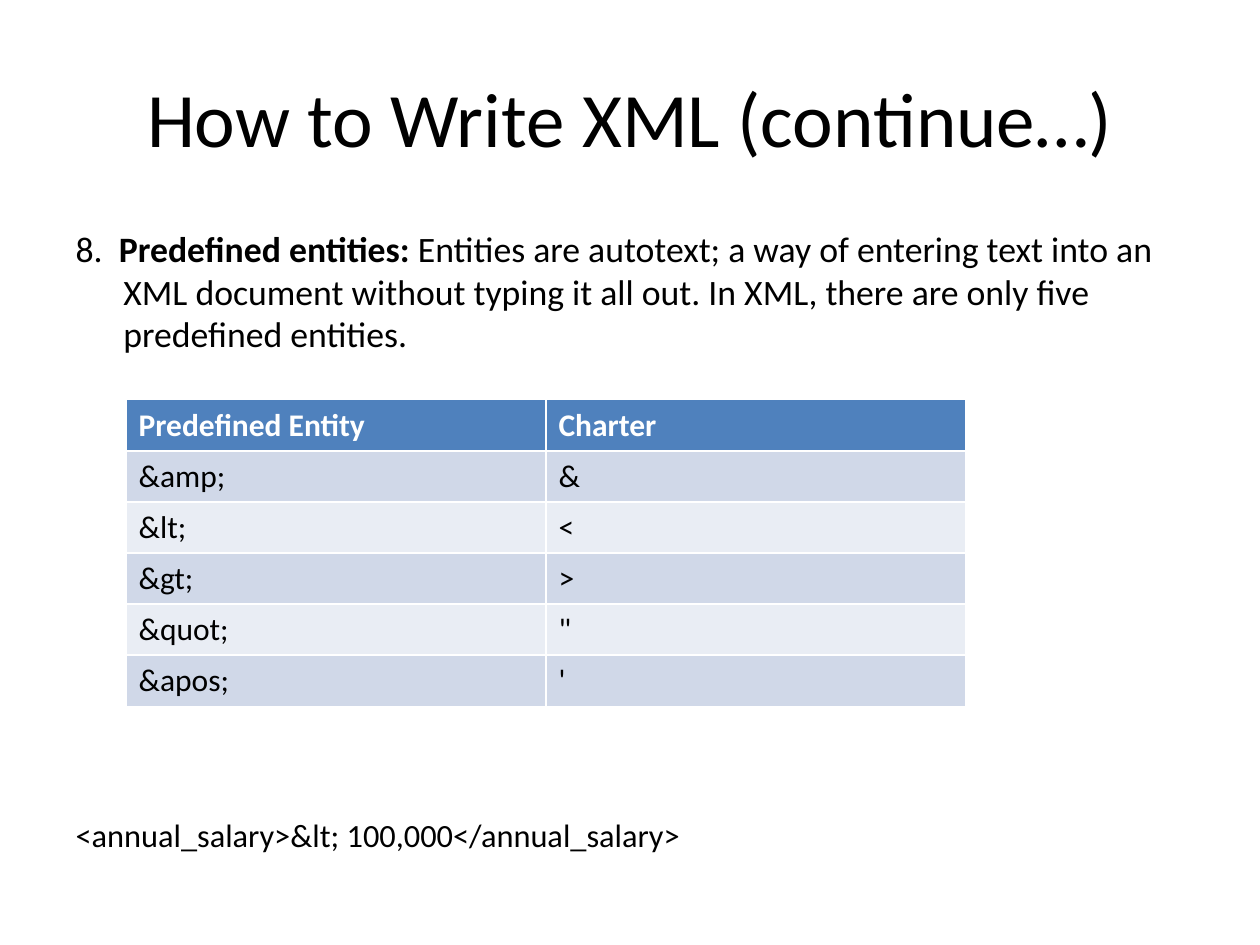
import pptx
import pptx.util
import pptx.dml.color
import pptx.enum.text
from lxml import etree
from pptx.oxml.ns import qn

BLACK = pptx.dml.color.RGBColor(0x00, 0x00, 0x00)
WHITE = pptx.dml.color.RGBColor(0xFF, 0xFF, 0xFF)
HEADER = pptx.dml.color.RGBColor(0x4F, 0x81, 0xBD)
BANDS = (
    pptx.dml.color.RGBColor(0xE9, 0xED, 0xF4),
    pptx.dml.color.RGBColor(0xD0, 0xD8, 0xE8),
)
FONT = "Calibri"
W, H = pptx.util.Inches(10), pptx.util.Inches(7.5)
ENTITIES = [
    ("Predefined Entity", "Charter"),
    ("&amp;", "&"),
    ("&lt;", "<"),
    ("&gt;", ">"),
    ("&quot;", '"'),
    ("&apos;", "'"),
]


def box(x, y, w, h):
    return int(W * x), int(H * y), int(W * w), int(H * h)


def place(sp, x, y, w, h):
    sp.left, sp.top, sp.width, sp.height = box(x, y, w, h)


def add_run(p, text, size, color=BLACK, bold=False):
    r = p.add_run()
    r.text = text
    r.font.name = FONT
    r.font.size = pptx.util.Pt(size)
    r.font.bold = bold
    r.font.color.rgb = color


def add_title(s, text):
    sp = s.shapes.title
    place(sp, 0.05, 0.04, 0.9, 1 / 6)
    tf = sp.text_frame
    tf.vertical_anchor = pptx.enum.text.MSO_ANCHOR.MIDDLE
    p = tf.paragraphs[0]
    p.alignment = pptx.enum.text.PP_ALIGN.CENTER
    add_run(p, text, 44)


def hang(p, before):
    pPr = p._p.get_or_add_pPr()
    pPr.set("marL", str(pptx.util.Inches(0.38)))
    pPr.set("indent", str(pptx.util.Inches(-0.38)))
    etree.SubElement(pPr, qn("a:buNone"))
    p.space_before = pptx.util.Pt(before)


def add_body(s, paragraphs):
    sp = s.placeholders[1]
    place(sp, 0.05, 0.233, 0.9, 0.66)
    tf = sp.text_frame
    tf.auto_size = pptx.enum.text.MSO_AUTO_SIZE.NONE
    for i, (before, size, runs) in enumerate(paragraphs):
        p = tf.add_paragraph() if i else tf.paragraphs[0]
        hang(p, before)
        for text, bold in runs:
            add_run(p, text, size, bold=bold)


def add_entity_table(s, rows):
    frame = s.shapes.add_table(len(rows), len(rows[0]), *box(0.1, 0.423, 2 / 3, 0.324))
    for i, row in enumerate(rows):
        for j, text in enumerate(row):
            cell = frame.table.cell(i, j)
            cell.fill.solid()
            cell.fill.fore_color.rgb = BANDS[i % 2] if i else HEADER
            color = BLACK if i else WHITE
            add_run(cell.text_frame.paragraphs[0], text, 18, color, bold=i == 0)


def main():
    prs = pptx.Presentation()
    prs.slide_width, prs.slide_height = W, H
    s = prs.slides.add_slide(prs.slide_layouts[1])
    add_title(s, "How to Write XML (continue…)")
    add_body(s, [
        (4, 20.4, [
            ("8.  ", False),
            ("Predefined entities: ", True),
            ("Entities are autotext; a way of entering text into an XML document "
             "without typing it all out. In XML, there are only five predefined "
             "entities.", False),
        ]),
        (263, 18.5, [("<annual_salary>&lt; 100,000</annual_salary>", False)]),
    ])
    add_entity_table(s, ENTITIES)
    prs.save("out.pptx")


if __name__ == "__main__":
    main()
